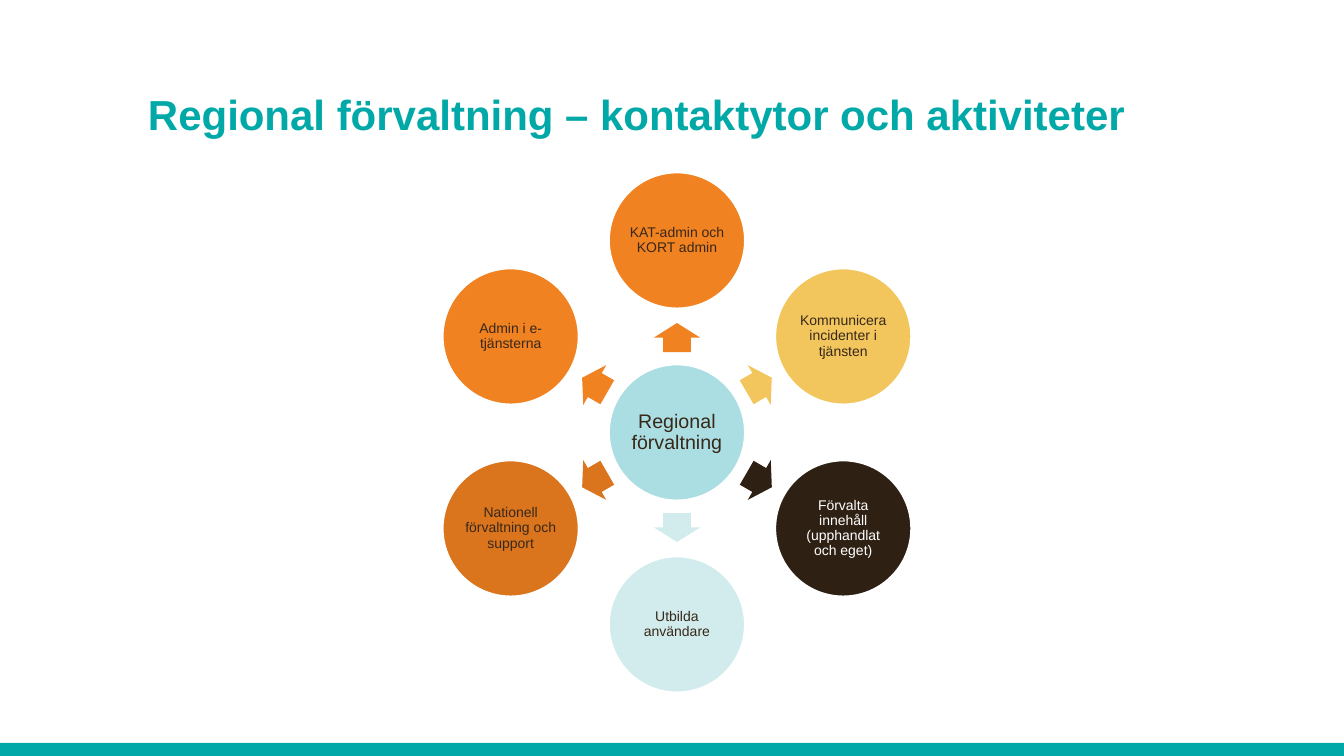
from math import cos, radians, sin

from pptx import Presentation
from pptx.dml.color import RGBColor
from pptx.enum.shapes import MSO_SHAPE
from pptx.enum.text import MSO_ANCHOR, MSO_AUTO_SIZE, PP_ALIGN
from pptx.util import Emu, Pt

RECT, OVAL, ARROW = MSO_SHAPE.RECTANGLE, MSO_SHAPE.OVAL, MSO_SHAPE.RIGHT_ARROW
MIDDLE, BOTTOM = MSO_ANCHOR.MIDDLE, MSO_ANCHOR.BOTTOM
LEFT, CENTER = PP_ALIGN.LEFT, PP_ALIGN.CENTER
NO_AUTOFIT = MSO_AUTO_SIZE.NONE

FONT = "Arial"
WIDTH, HEIGHT = 1344, 756
COLORS = {
    "teal": "00A9A7", "aqua": "AADEE2", "pale": "D2ECEE", "orange": "F18221",
    "rust": "DA751D", "yellow": "F2C65D", "dark": "2E2114",
    "text": "382819", "white": "FFFFFF",
}
# Clockwise from the top: label, fill, text colour
ACTIVITIES = [
    ("KAT-admin och KORT admin", "orange", "text"),
    ("Kommunicera incidenter i tjänsten", "yellow", "text"),
    ("Förvalta innehåll (upphandlat och eget)", "dark", "white"),
    ("Utbilda användare", "pale", "text"),
    ("Nationell förvaltning och support", "rust", "text"),
    ("Admin i e-tjänsterna", "orange", "text"),
]


def px(n):
    return Emu(round(n * 914400 / 100.8))


def rgb(name):
    return RGBColor.from_string(COLORS[name])


def set_text(s, text, size, color, align, anchor, inset, bold=False):
    tf = s.text_frame
    tf.text = text
    tf.word_wrap = True
    tf.auto_size = NO_AUTOFIT
    tf.vertical_anchor = anchor
    tf.margin_left = tf.margin_right = px(inset)
    tf.margin_top = tf.margin_bottom = px(inset)
    p = tf.paragraphs[0]
    p.alignment = align
    p.font.name, p.font.size, p.font.bold = FONT, Pt(size), bold
    p.font.color.rgb = rgb(color)
    return p


def add_filled(slide, kind, x, y, w, h, fill):
    s = slide.shapes.add_shape(kind, px(x), px(y), px(w), px(h))
    s.shadow.inherit = False
    s.fill.solid()
    s.fill.fore_color.rgb = rgb(fill)
    s.line.fill.background()
    return s


def add_centered(slide, kind, cx, cy, w, h, fill):
    return add_filled(slide, kind, cx - w / 2, cy - h / 2, w, h, fill)


def add_circle(slide, cx, cy, d, label, fill, color, size, inset):
    s = add_centered(slide, OVAL, cx, cy, d, d, fill)
    s.line.color.rgb = rgb("white")
    s.line.width = Pt(2)
    p = set_text(s, label, size, color, CENTER, MIDDLE, inset)
    p.line_spacing = 0.9


def add_title(slide, x, y, w, h, text):
    s = slide.shapes.title
    s.left, s.top, s.width, s.height = px(x), px(y), px(w), px(h)
    set_text(s, text, 30, "teal", LEFT, BOTTOM, 0, bold=True)


def add_radial_diagram(slide, x, y, w, h, hub, activities):
    """Place a hub in the middle of the box, with arrows to a ring of circles."""
    cx, cy = x + w / 2, y + h / 2
    d = 137
    ring = (h - d) / 2
    add_circle(slide, cx, cy, d, hub, "aqua", "text", 14, 2)
    for i, (label, fill, color) in enumerate(activities):
        angle = i * 360 / len(activities) - 90
        dx, dy = cos(radians(angle)), sin(radians(angle))
        arrow = add_centered(slide, ARROW, cx + 95 * dx, cy + 95 * dy, 29, 46, fill)
        arrow.adjustments[0], arrow.adjustments[1] = 0.6, 0.5
        arrow.rotation = angle % 360
        add_circle(slide, cx + ring * dx, cy + ring * dy, d, label, fill, color, 10, 1)


def main():
    prs = Presentation()
    prs.slide_width, prs.slide_height = px(WIDTH), px(HEIGHT)
    slide = prs.slides.add_slide(prs.slide_layouts[5])
    add_filled(slide, RECT, 0, 743, WIDTH, 13, "teal")
    add_title(slide, 148, 36, 1047, 103,
              "Regional förvaltning – kontaktytor och aktiviteter")
    add_radial_diagram(slide, 442, 172, 470, 521, "Regional förvaltning", ACTIVITIES)
    prs.save("out.pptx")


if __name__ == "__main__":
    main()
